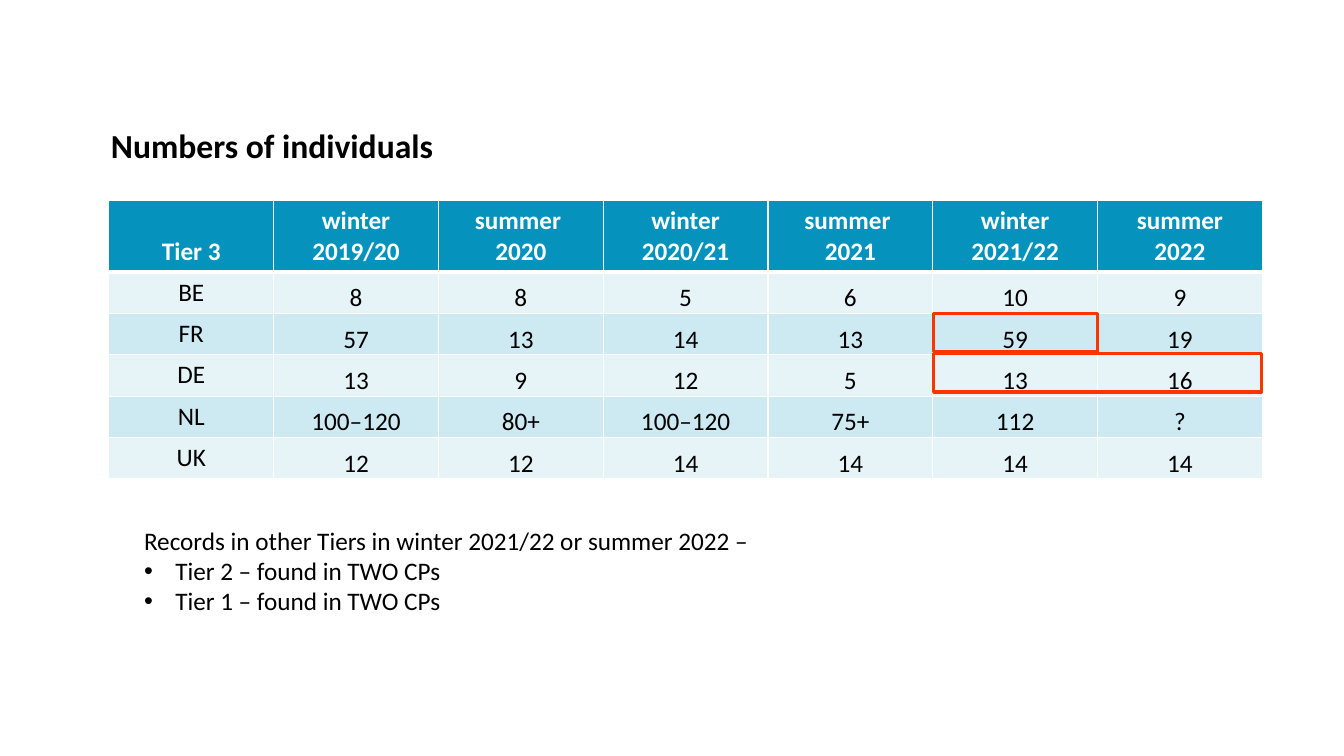
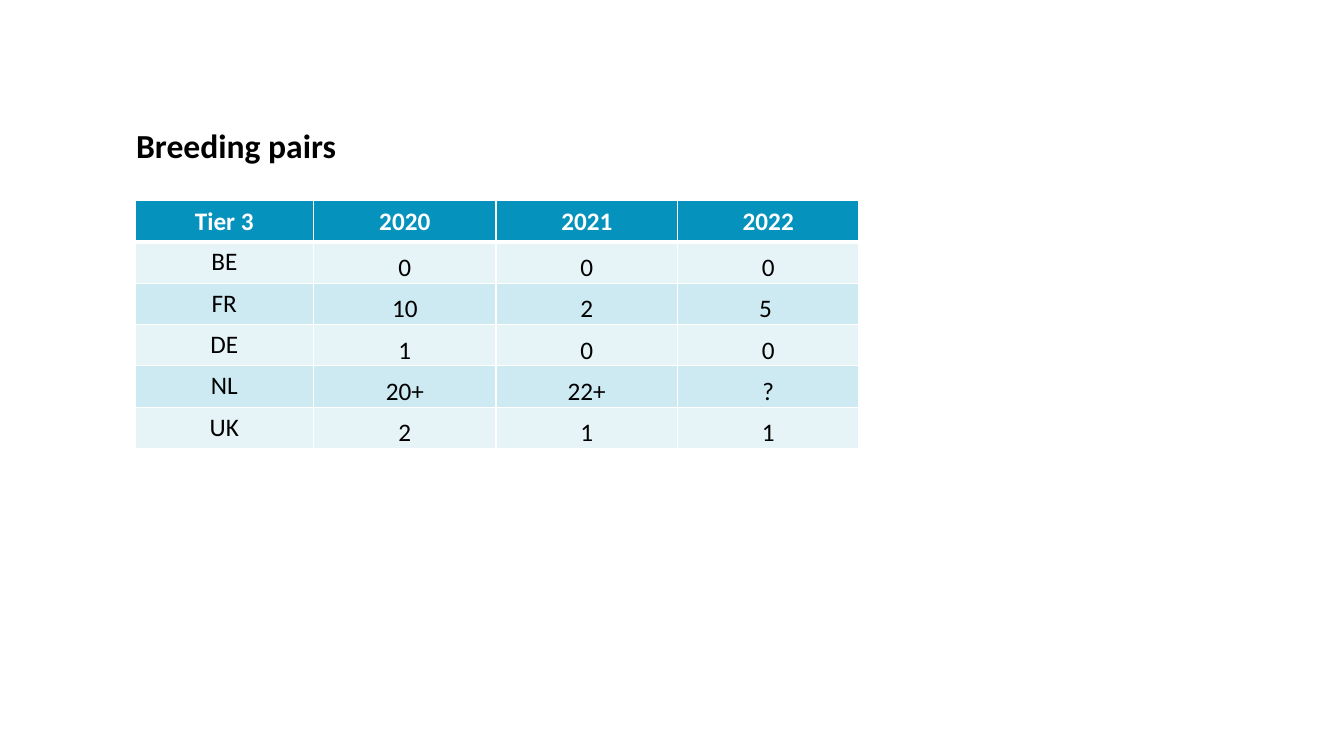
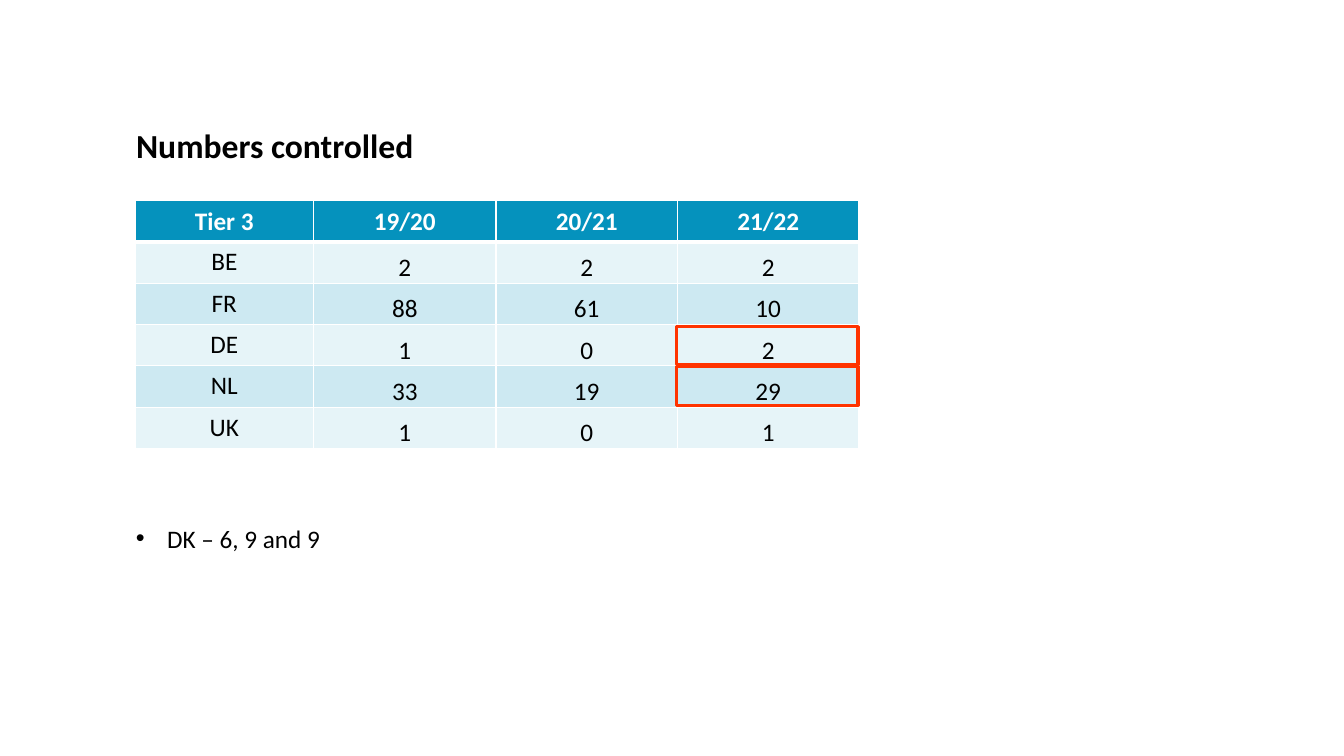
"""Build three slides of Tier 3 tables with highlighted cells and notes."""
import dataclasses

import lxml.etree
import pptx
import pptx.dml.color
import pptx.enum.shapes
import pptx.enum.text
import pptx.oxml.ns
import pptx.util

Inches = pptx.util.Inches
Pt = pptx.util.Pt
ANCHOR = pptx.enum.text.MSO_ANCHOR
ALIGN = pptx.enum.text.PP_ALIGN


@dataclasses.dataclass(frozen=True)
class Theme:
    """Colours, type sizes and measures shared by the slides."""
    font: str = "Calibri"
    title_size: int = 24
    body_size: int = 18
    black: str = "000000"
    white: str = "FFFFFF"
    header: str = "0592BD"
    bands: tuple = ("E6F4F8", "CDE9F2")
    highlight: str = "FF3300"
    title_top: float = 1.23
    title_height: float = 0.57
    table_top: float = 1.99
    row_height: float = 0.41
    highlight_height: float = 0.38


THEME = Theme()
COUNTRIES = ("BE", "FR", "DE", "NL", "UK")
YEAR_COLUMNS = (1.77, 1.81, 1.8, 1.8)


def rgb(value):
    """Return a colour object for a hex value."""
    return pptx.dml.color.RGBColor.from_string(value)


def write_text(paragraph, text, size=THEME.body_size, color=THEME.black, bold=False,
               align=ALIGN.LEFT, spacing=None):
    """Fill a paragraph with text in the given format."""
    paragraph.text = text
    paragraph.alignment = align
    if spacing:
        paragraph.line_spacing = spacing
    for run in paragraph.runs:
        run.font.name = THEME.font
        run.font.size = Pt(size)
        run.font.bold = bold
        run.font.color.rgb = rgb(color)


def set_indent(paragraph, left, first=0, bullet=None):
    """Indent a paragraph and give it an optional bullet."""
    properties = paragraph._p.get_or_add_pPr()
    properties.set("marL", str(Inches(left)))
    properties.set("indent", str(Inches(first)))
    if bullet:
        for tag, key, value in (("a:buFont", "typeface", "Arial"), ("a:buChar", "char", bullet)):
            element = lxml.etree.SubElement(properties, pptx.oxml.ns.qn(tag))
            element.set(key, value)


def set_borders(cell, top=1, bottom=1):
    """Draw white borders around a cell, with widths in points."""
    properties = cell._tc.get_or_add_tcPr()
    widths = {"a:lnL": 1, "a:lnR": 1, "a:lnT": top, "a:lnB": bottom}
    for position, (tag, width) in enumerate(widths.items()):
        line = lxml.etree.Element(pptx.oxml.ns.qn(tag), w=str(Pt(width)))
        fill = lxml.etree.SubElement(line, pptx.oxml.ns.qn("a:solidFill"))
        lxml.etree.SubElement(fill, pptx.oxml.ns.qn("a:srgbClr"), val=THEME.white)
        properties.insert(position, line)


def add_titled_slide(presentation, title, left, width):
    """Add a title-only slide and format its title."""
    slide = presentation.slides.add_slide(presentation.slide_layouts[5])
    shape = slide.shapes.title
    shape.left, shape.top = Inches(left), Inches(THEME.title_top)
    shape.width, shape.height = Inches(width), Inches(THEME.title_height)
    frame = shape.text_frame
    frame.auto_size = pptx.enum.text.MSO_AUTO_SIZE.NONE
    frame.vertical_anchor = ANCHOR.TOP
    write_text(frame.paragraphs[0], title, size=THEME.title_size, bold=True, spacing=0.9)
    return slide


def format_cell(cell, text, row, column):
    """Write a table cell in the style of its row and column."""
    cell.fill.solid()
    if row == 0:
        cell.fill.fore_color.rgb = rgb(THEME.header)
        cell.vertical_anchor = ANCHOR.BOTTOM
        style = {"color": THEME.white, "bold": True}
    else:
        cell.fill.fore_color.rgb = rgb(THEME.bands[(row - 1) % 2])
        style = {}
        if column > 0:
            cell.vertical_anchor = ANCHOR.BOTTOM
            cell.margin_left = cell.margin_right = Inches(0.07)
            cell.margin_top = cell.margin_bottom = 0
            style = {"spacing": 1.07}
    for position, line in enumerate(text.split("\n")):
        frame = cell.text_frame
        paragraph = frame.paragraphs[0] if position == 0 else frame.add_paragraph()
        write_text(paragraph, line, align=ALIGN.CENTER, **style)
    set_borders(cell, top=3 if row == 1 else 1, bottom=3 if row == 0 else 1)


def add_tier_table(slide, left, columns, periods, records, header_height=THEME.row_height):
    """Add a table with one row for each country."""
    rows = [("Tier 3", *periods)]
    rows += [(country, *record) for country, record in zip(COUNTRIES, records)]
    heights = [header_height] + [THEME.row_height] * len(COUNTRIES)
    table = slide.shapes.add_table(
        len(rows), len(columns), Inches(left), Inches(THEME.table_top),
        Inches(sum(columns)), Inches(sum(heights))).table
    for column, width in zip(table.columns, columns):
        column.width = Inches(width)
    for row, height in zip(table.rows, heights):
        row.height = Inches(height)
    for row, values in enumerate(rows):
        for column, text in enumerate(values):
            format_cell(table.cell(row, column), text, row, column)


def add_note(slide, left, top, width, height, bullets, lead=None):
    """Add a text box with an optional lead line above bullets."""
    frame = slide.shapes.add_textbox(
        Inches(left), Inches(top), Inches(width), Inches(height)).text_frame
    frame.word_wrap = True
    lines = ([lead] if lead else []) + bullets
    for position, line in enumerate(lines):
        paragraph = frame.paragraphs[0] if position == 0 else frame.add_paragraph()
        write_text(paragraph, line)
        if line == lead:
            set_indent(paragraph, 0.25)
        else:
            set_indent(paragraph, 0.56, first=-0.31, bullet="•")


def add_highlight(slide, left, top, width):
    """Outline table cells with a red frame."""
    shape = slide.shapes.add_shape(
        pptx.enum.shapes.MSO_SHAPE.RECTANGLE, Inches(left), Inches(top),
        Inches(width), Inches(THEME.highlight_height))
    shape.shadow.inherit = False
    shape.fill.background()
    shape.line.color.rgb = rgb(THEME.highlight)
    shape.line.width = Pt(2.25)


def add_individuals_slide(presentation):
    """Add the slide on numbers of individuals."""
    slide = add_titled_slide(presentation, "Numbers of individuals", 1, 9.77)
    periods = ("winter\n2019/20", "summer \n2020", "winter\n2020/21",
               "summer \n2021", "winter\n2021/22", "summer\n2022")
    records = (("8", "8", "5", "6", "10", "9"),
               ("57", "13", "14", "13", "59", "19"),
               ("13", "9", "12", "5", "13", "16"),
               ("100–120", "80+", "100–120", "75+", "112", "?"),
               ("12", "12", "14", "14", "14", "14"))
    add_tier_table(slide, 1.08, [11.44 / 7] * 7, periods, records, header_height=0.7)
    add_note(slide, 1.08, 5.16, 6.58, 1.78,
             ["Tier 2 – found in TWO CPs", "Tier 1 – found in TWO CPs"],
             lead="Records in other Tiers in winter 2021/22 or summer 2022 –")
    add_highlight(slide, 9.26, 3.11, 1.63)
    add_highlight(slide, 9.26, 3.51, 3.25)


def add_breeding_slide(presentation):
    """Add the slide on breeding pairs."""
    slide = add_titled_slide(presentation, "Breeding pairs", 1.25, 6.85)
    records = (("0", "0", "0"), ("10", "2", "5 "), ("1", "0", "0"),
               ("20+", "22+", "?"), ("2", "1", "1"))
    add_tier_table(slide, 1.34, YEAR_COLUMNS, ("2020", "2021", "2022"), records)


def add_controlled_slide(presentation):
    """Add the slide on numbers controlled."""
    slide = add_titled_slide(presentation, "Numbers controlled", 1.25, 10.57)
    records = (("2", "2", "2"), ("88", "61", "10"), ("1", "0", "2"),
               ("33", "19", "29"), ("1", "0", "1"))
    add_tier_table(slide, 1.34, YEAR_COLUMNS, ("19/20", "20/21", "21/22"), records)
    add_note(slide, 1, 5.14, 2.39, 0.71, ["DK – 6, 9 and 9"])
    for top in (3.24, 3.64):
        add_highlight(slide, 6.71, top, 1.8)


def main():
    """Build and save the presentation."""
    presentation = pptx.Presentation()
    presentation.slide_width = Inches(13.33)
    presentation.slide_height = Inches(7.5)
    add_individuals_slide(presentation)
    add_breeding_slide(presentation)
    add_controlled_slide(presentation)
    presentation.save("out.pptx")


if __name__ == "__main__":
    main()
